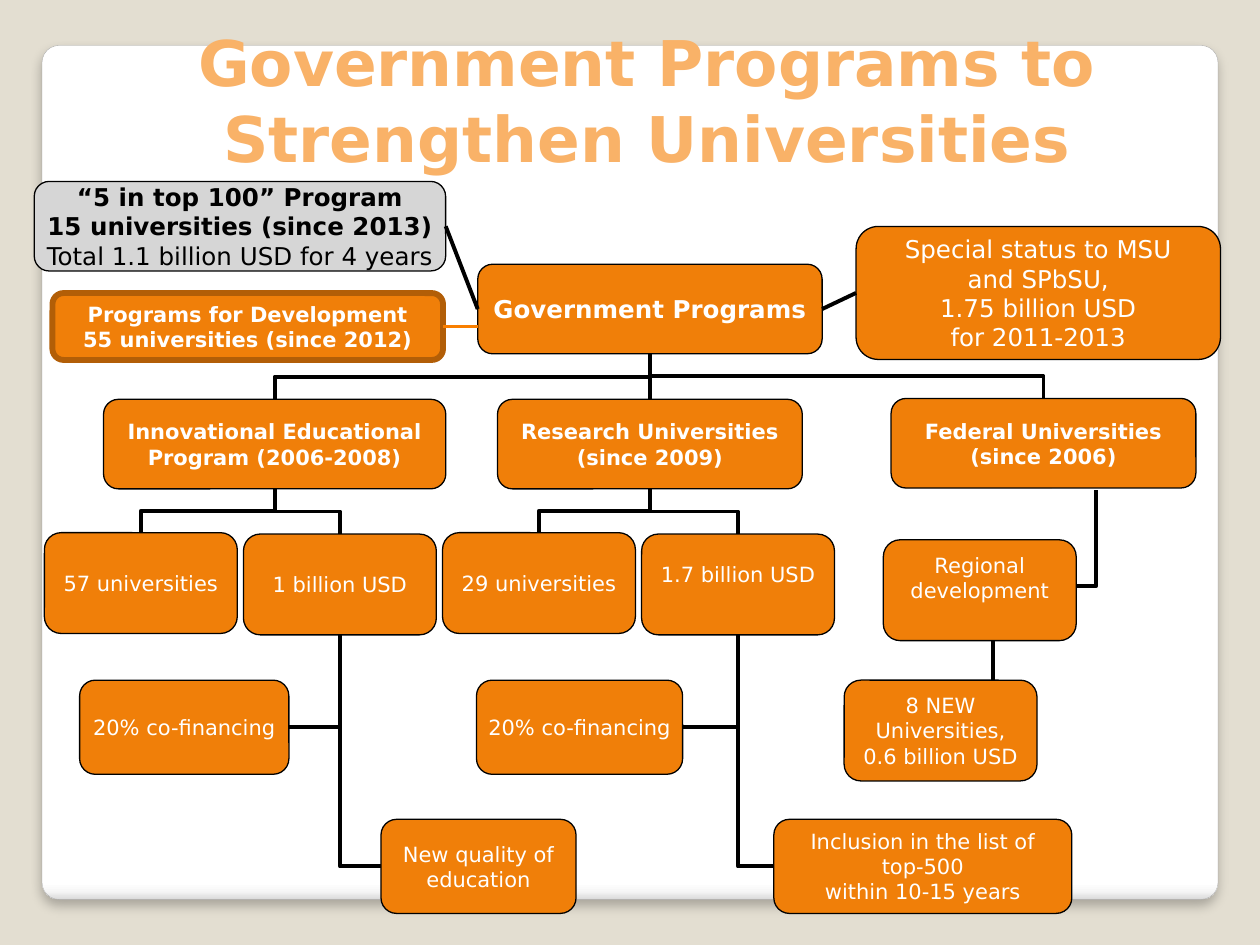
from dataclasses import dataclass
from typing import Any

from lxml.etree import SubElement
from pptx import Presentation
from pptx.dml.color import RGBColor
from pptx.enum.shapes import MSO_CONNECTOR as Cxn, MSO_SHAPE as Shape
from pptx.enum.text import MSO_ANCHOR as Anchor, MSO_AUTO_SIZE as AutoSize, PP_ALIGN as Align
from pptx.oxml.ns import qn
from pptx.util import Pt

Point = tuple[float, float]


@dataclass(frozen=True)
class Theme:
    font: str = "DejaVu Sans"
    background: str = "E3DED1"
    panel_line: str = "A4A4A4"
    panel_stops: tuple = ((0, "FFFFFF"), (98, "FFFFFF"), (99, "F7F7F7"), (100, "DADADA"))
    title: str = "F9B268"
    orange: str = "F07F09"
    rust: str = "B25E07"
    link: str = "F97F00"
    grey: str = "D6D6D6"
    black: str = "000000"
    white: str = "FFFFFF"
    title_size: float = 36
    large: float = 14
    small: float = 12
    box_line: float = 0.75
    link_line: float = 2.25


T = Theme()


@dataclass(frozen=True)
class Box:
    x: float
    y: float
    w: float
    h: float
    lines: tuple[str, ...]
    bold_lines: int = 0
    size: float = T.small
    wrap: bool = False
    inset: float = 1
    bottom_inset: float = 0
    fill: str = T.orange
    ink: str = T.white
    line: str = T.black
    line_width: float = T.box_line

    @property
    def top(self) -> Point:
        return self.x + self.w / 2, self.y

    @property
    def bottom(self) -> Point:
        return self.x + self.w / 2, self.y + self.h

    @property
    def left(self) -> Point:
        return self.x, self.y + self.h / 2

    @property
    def right(self) -> Point:
        return self.x + self.w, self.y + self.h / 2


def rgb(value: str) -> RGBColor:
    return RGBColor.from_string(value)


def apply(obj: Any, **formats: Any) -> None:
    for name, value in formats.items():
        setattr(obj, name, value)


def style_run(r: Any, size: float, color: str, bold: bool) -> None:
    apply(r.font, name=T.font, size=Pt(size), bold=bold)
    r.font.color.rgb = rgb(color)


def style_line(obj: Any, color: str, width: float) -> None:
    obj.line.width = Pt(width)
    obj.line.color.rgb = rgb(color)


def draw_panel(slide: Any) -> None:
    sp = slide.shapes.add_shape(Shape.ROUNDED_RECTANGLE, Pt(24), Pt(26), Pt(672), Pt(488))
    sp.adjustments[0] = 0.02
    sp.fill.gradient()
    sp.fill.gradient_angle = 270
    props = sp._element.spPr
    stops = props.find(".//" + qn("a:gsLst"))
    for stop in list(stops):
        stops.remove(stop)
    for position, color in T.panel_stops:
        stop = SubElement(stops, qn("a:gs"), pos=str(position * 1000))
        SubElement(stop, qn("a:srgbClr"), val=color)
    style_line(sp, T.panel_line, 0.16)
    effects = SubElement(props, qn("a:effectLst"))
    shadow = SubElement(effects, qn("a:outerShdw"), blurRad=str(Pt(6)), dist=str(Pt(4)),
                        dir="5400000", algn="t", rotWithShape="0")
    SubElement(SubElement(shadow, qn("a:srgbClr"), val=T.black), qn("a:alpha"), val="25000")
    slide.shapes._spTree.insert(2, sp._element)  # behind the title


def draw_title(slide: Any, text: str) -> None:
    sp = slide.shapes.title
    apply(sp, left=Pt(19.4), top=Pt(14.4), width=Pt(700.6), height=Pt(89.3))
    tf = sp.text_frame
    apply(tf, text=text, vertical_anchor=Anchor.BOTTOM, auto_size=AutoSize.NONE, word_wrap=True)
    p = tf.paragraphs[0]
    p.alignment = Align.CENTER
    style_run(p.runs[0], T.title_size, T.title, True)


def draw_box(slide: Any, box: Box) -> None:
    sp = slide.shapes.add_shape(Shape.ROUNDED_RECTANGLE, Pt(box.x), Pt(box.y), Pt(box.w), Pt(box.h))
    sp.shadow.inherit = False
    sp.fill.solid()
    sp.fill.fore_color.rgb = rgb(box.fill)
    style_line(sp, box.line, box.line_width)
    tf = sp.text_frame
    apply(tf, text="\n".join(box.lines), word_wrap=box.wrap, vertical_anchor=Anchor.MIDDLE,
          margin_left=Pt(box.inset), margin_right=Pt(box.inset),
          margin_top=0, margin_bottom=Pt(box.bottom_inset))
    for i, p in enumerate(tf.paragraphs):
        p.alignment = Align.CENTER
        for r in p.runs:
            style_run(r, box.size, box.ink, i < box.bold_lines)


def draw_link(slide: Any, start: Point, end: Point, kind: Any = Cxn.STRAIGHT,
              color: str = T.black) -> Any:
    cxn = slide.shapes.add_connector(kind, *map(Pt, (*start, *end)))
    style_line(cxn, color, T.link_line)
    SubElement(cxn._element.spPr, qn("a:effectLst"))
    return cxn


def draw_drop(slide: Any, start: Point, end: Point) -> None:
    """Link that goes down, across, then down: an elbow turned by a quarter."""
    (x1, y1), (x2, y2) = start, end
    if abs(x2 - x1) < 1:
        draw_link(slide, start, end)
        return
    cx, cy, dx, dy = (x1 + x2) / 2, (y1 + y2) / 2, (x2 - x1) / 2, (y2 - y1) / 2
    cxn = draw_link(slide, (cx - dy, cy + dx), (cx + dy, cy - dx), Cxn.ELBOW)
    cxn._element.spPr.find(qn("a:xfrm")).set("rot", "5400000")


def draw_corner(slide: Any, side: Point, bottom: Point) -> None:
    """Link with one bend, sideways from a box and up to its parent."""
    cxn = draw_link(slide, side, bottom, Cxn.ELBOW)
    cxn._element.spPr.find(qn("a:prstGeom")).set("prst", "bentConnector2")


LEAF_W, LEAF_H, LEAF_STEP, HEAD_H, NOTE_H = 110.2, 57.6, 113.75, 51.2, 53.8
LEAF_X = [25.4 + i * LEAF_STEP for i in range(4)]

government = Box(273, 151, 196.8, HEAD_H, ("Government Programs",), 1, T.large)
innovation = Box(59.2, 228.2, 195.6, HEAD_H, ("Innovational Educational Program (2006-2008)",),
                 1, wrap=True)
research = Box(284.3, 228.2, 174.2, HEAD_H, ("Research Universities", "(since 2009)"), 2)
federal = Box(509.2, 227.7, 174.2, HEAD_H, ("Federal Universities", "(since 2006)"), 2)
count_57 = Box(LEAF_X[0], 304.4, LEAF_W, LEAF_H, ("57 universities",))
funds_1 = Box(LEAF_X[1], 305.2, LEAF_W, LEAF_H, ("1 billion USD",))
count_29 = Box(LEAF_X[2], 304.4, LEAF_W, LEAF_H, ("29 universities",))
funds_17 = Box(LEAF_X[3], 305.2, LEAF_W, LEAF_H, ("1.7 billion USD",), bottom_inset=12.2)
regional = Box(504.8, 308.5, LEAF_W, LEAF_H, ("Regional development",), wrap=True,
               inset=6.5, bottom_inset=14)
new_unis = Box(482.4, 388.7, LEAF_W, LEAF_H, ("8 NEW", "Universities,", "0.6 billion USD"))
share_1 = Box(45.5, 388.7, 119.6, NOTE_H, ("20% co-financing",))
share_2 = Box(272.3, 388.7, 117.8, NOTE_H, ("20% co-financing",))
quality = Box(217.7, 468.2, 111.5, NOTE_H, ("New quality of education",), wrap=True)
ranking = Box(442.2, 468.2, 170.3, NOTE_H,
              ("Inclusion in the list of", "top-500", "within 10-15 years"))
top_100 = Box(19.6, 103.7, 235.1, HEAD_H,
              ("“5 in top 100” Program", "15 universities (since 2013)",
               "Total 1.1 billion USD for 4 years"), 2, T.large, fill=T.grey, ink=T.black)
special = Box(489.2, 129.4, 208.2, 76, ("Special status to MSU", "and SPbSU,", "1.75 billion USD",
                                       "for 2011-2013"), size=T.large)
development = Box(30, 167.5, 223.2, 38.2, ("Programs for Development", "55 universities (since 2012)"),
                  2, line=T.rust, line_width=3.35)

BOXES = [government, innovation, research, federal, count_57, funds_1, count_29, funds_17,
         regional, new_unis, share_1, share_2, quality, ranking, top_100, special, development]
DROPS = [(government, innovation), (government, research), (government, federal),
         (innovation, count_57), (innovation, funds_1), (research, count_29), (research, funds_17)]
CORNERS = [(share_1.right, funds_1), (quality.left, funds_1),
           (share_2.right, funds_17), (ranking.left, funds_17)]


def main() -> None:
    prs = Presentation()
    apply(prs, slide_width=Pt(720), slide_height=Pt(540))
    slide = prs.slides.add_slide(prs.slide_layouts[5])
    slide.background.fill.solid()
    slide.background.fill.fore_color.rgb = rgb(T.background)
    draw_panel(slide)
    draw_title(slide, "Government Programs to Strengthen Universities")
    for parent, child in DROPS:
        draw_drop(slide, parent.bottom, child.top)
    draw_drop(slide, (626.4, 280), (567.4, 389.5))  # federal to new universities, behind regional
    for side, parent in CORNERS:
        draw_corner(slide, side, parent.bottom)
    for box in BOXES:
        draw_box(slide, box)
    draw_link(slide, top_100.right, government.left)
    draw_link(slide, government.right, special.left)
    draw_link(slide, development.right, (government.x, development.right[1]), color=T.link)
    prs.save("out.pptx")


if __name__ == "__main__":
    main()
